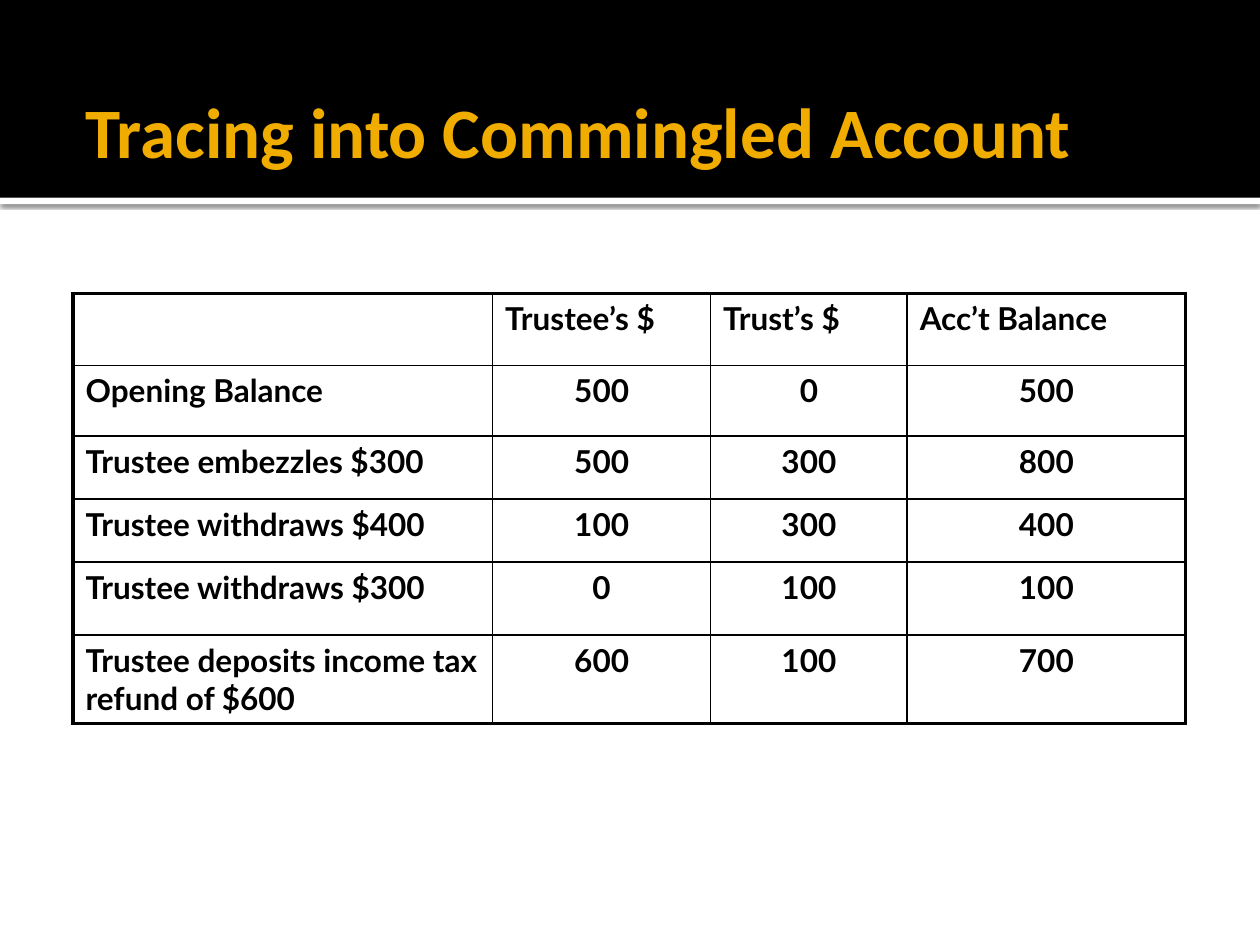
from lxml import etree
from pptx import Presentation
from pptx.dml.color import RGBColor
from pptx.enum.shapes import MSO_SHAPE
from pptx.enum.text import MSO_ANCHOR, PP_ALIGN
from pptx.oxml import parse_xml
from pptx.util import Inches, Pt

RECT = MSO_SHAPE.RECTANGLE
MIDDLE = MSO_ANCHOR.MIDDLE
LEFT, CENTER = PP_ALIGN.LEFT, PP_ALIGN.CENTER
NS = 'xmlns:a="http://schemas.openxmlformats.org/drawingml/2006/main"'
BLACK, WHITE, GOLD = "000000", "FFFFFF", "F0AD00"


def color(code):
    return RGBColor.from_string(code)


def style(para, name, size, code):
    font = para.font
    font.name, font.size, font.bold = name, Pt(size), True
    font.color.rgb = color(code)


deck = Presentation()
deck.slide_width, deck.slide_height = Inches(10), Inches(7.5)
slide = deck.slides.add_slide(deck.slide_layouts[6])
shapes = slide.shapes

bands = []
for top, height, code in [(1.57, 0.05, WHITE), (0, 1.57, BLACK)]:
    band = shapes.add_shape(RECT, 0, Inches(top), Inches(10), Inches(height))
    band.shadow.inherit = False
    band.fill.solid()
    band.fill.fore_color.rgb = color(code)
    band.line.fill.background()
    bands.append(band)

effect = bands[0]._element.spPr.find("{*}effectLst")
effect.append(parse_xml(
    f'<a:outerShdw {NS} blurRad="{Pt(2.5)}" dist="{Pt(0.8)}" dir="5400000" '
    f'algn="tl" rotWithShape="0"><a:srgbClr val="{BLACK}">'
    '<a:alpha val="60000"/></a:srgbClr></a:outerShdw>'))

title = shapes.add_textbox(Inches(0.58), Inches(0.23), Inches(9.2), Inches(1.6))
frame = title.text_frame
frame.word_wrap = True
frame.vertical_anchor = MIDDLE
frame.margin_right = Inches(0.05)
frame.text = "Tracing into Commingled Account"
style(frame.paragraphs[0], "Calibri", 40.5, GOLD)

rows = [
    ("", "Trustee’s $", "Trust’s $", "Acc’t Balance"),
    ("Opening Balance", "500", "0", "500"),
    ("Trustee embezzles $300", "500", "300", "800"),
    ("Trustee withdraws $400", "100", "300", "400"),
    ("Trustee withdraws $300", "0", "100", "100"),
    ("Trustee deposits income tax refund of $600", "600", "100", "700"),
]
widths = [3.33, 1.73, 1.56, 2.21]
heights = [0.57, 0.56, 0.5, 0.5, 0.58, 0.7]
table = shapes.add_table(len(rows), len(widths), Inches(0.58), Inches(2.33),
                         Inches(sum(widths)), Inches(sum(heights))).table
table.first_row = table.horz_banding = False
for col, width in zip(table.columns, widths):
    col.width = Inches(width)
for row, height in zip(table.rows, heights):
    row.height = Inches(height)

for r, row in enumerate(rows):
    for c, text in enumerate(row):
        cell = table.cell(r, c)
        edges = {"lnL": c == 0, "lnR": c == len(widths) - 1,
                 "lnT": r == 0, "lnB": r == len(rows) - 1}
        props = cell._tc.get_or_add_tcPr()
        for tag, outer in edges.items():
            line = Pt(2.25 if outer else 1)
            props.append(etree.fromstring(
                f'<a:{tag} {NS} w="{line}"><a:solidFill>'
                f'<a:srgbClr val="{BLACK}"/></a:solidFill></a:{tag}>'))
        cell.fill.background()
        cell.text = text
        para = cell.text_frame.paragraphs[0]
        para.alignment = CENTER if r and c else LEFT
        style(para, "Lato", 18, BLACK)

deck.save("out.pptx")
